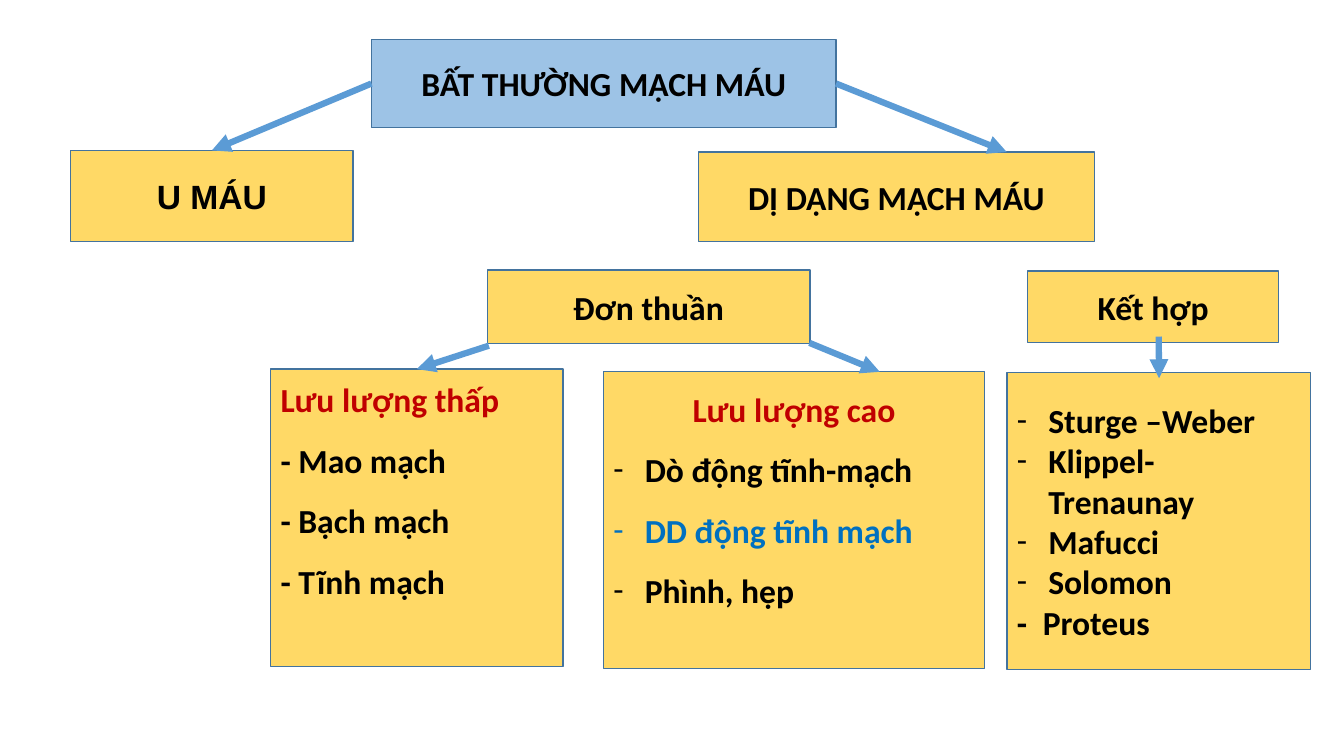
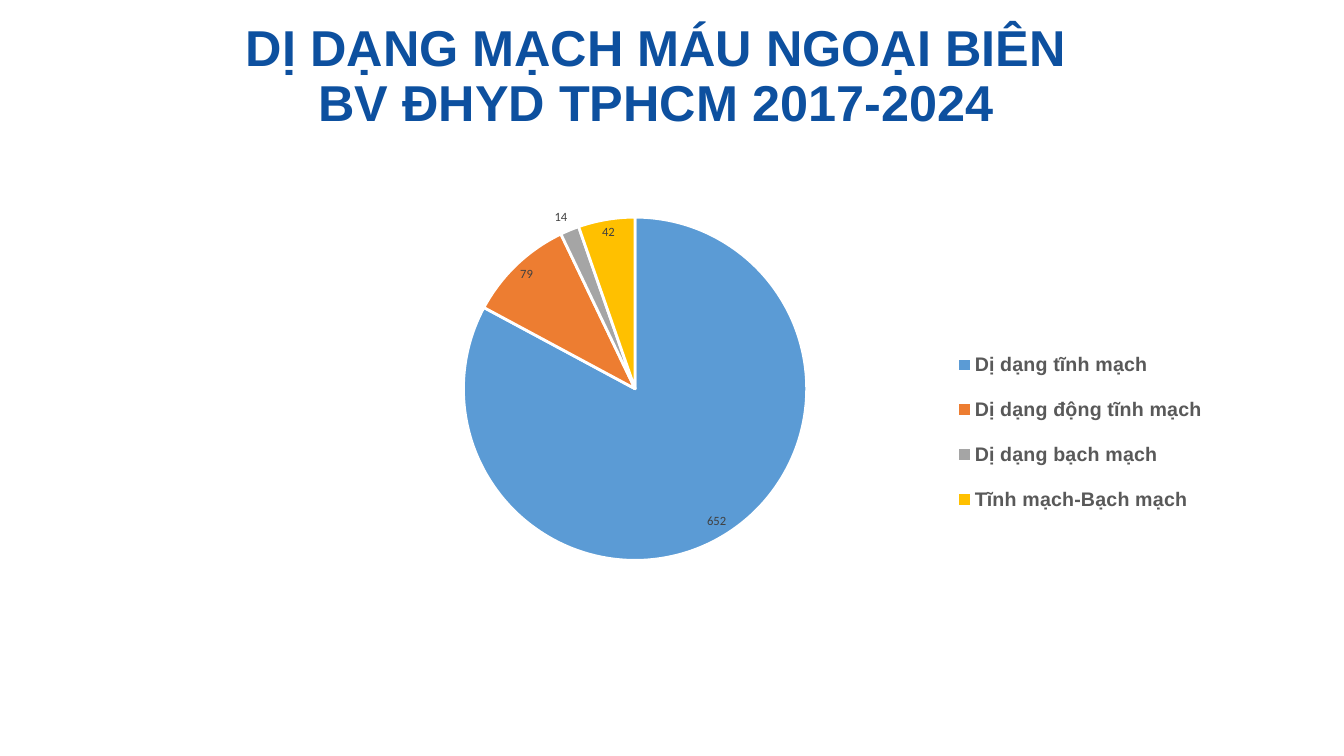
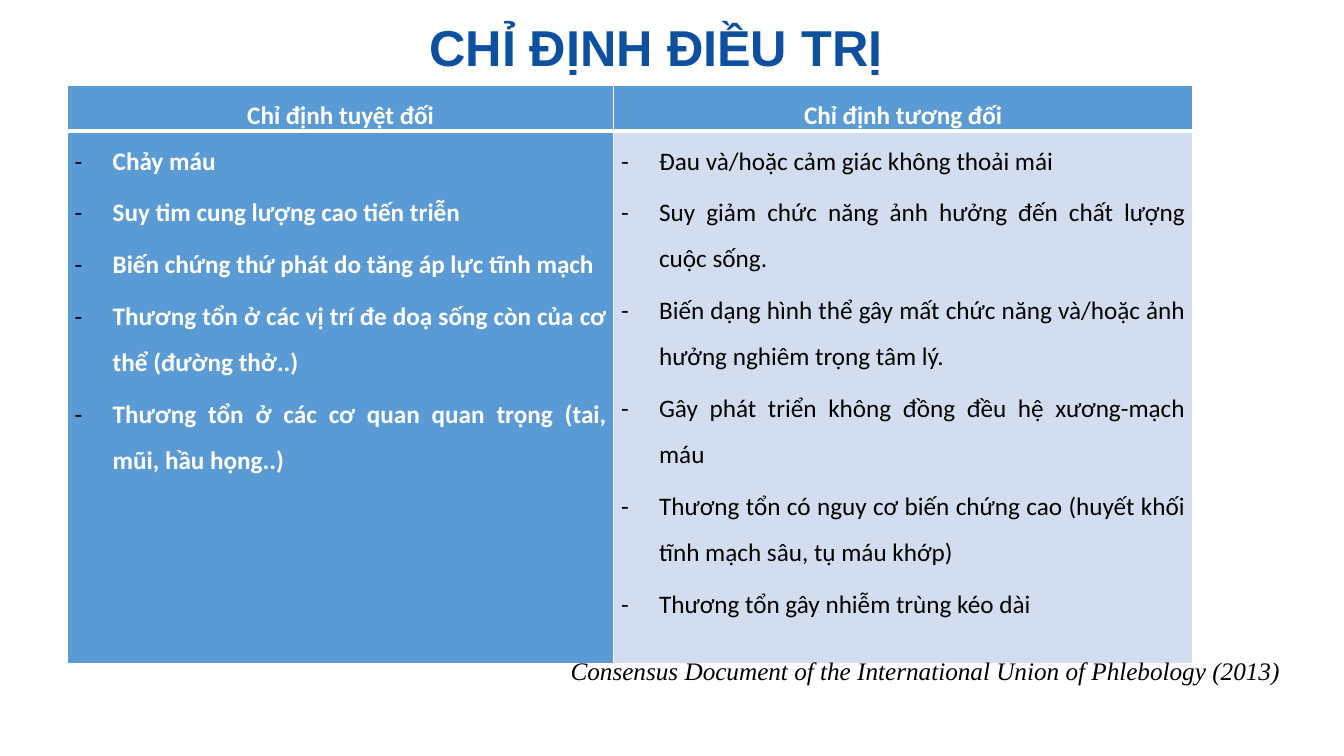
"""Build three slides on vascular anomalies: classification, case chart, treatment indications."""
import lxml.etree
import pptx
import pptx.chart.data
import pptx.dml.color
import pptx.enum.chart
import pptx.enum.shapes
import pptx.enum.text
import pptx.oxml
import pptx.oxml.ns
import pptx.util

Cm = pptx.util.Cm
Pt = pptx.util.Pt
qn = pptx.oxml.ns.qn
Align = pptx.enum.text.PP_ALIGN
Anchor = pptx.enum.text.MSO_ANCHOR

BLUE, YELLOW, OUTLINE = "5B9BD5", "FFD966", "43739E"
BLACK, WHITE, RED, TITLE_BLUE = "000000", "FFFFFF", "C00000", "0D509F"


def color(hex_string):
    """Turn a hex string into a colour."""
    return pptx.dml.color.RGBColor.from_string(hex_string)


def write(frame, index, text, size, ink, face="Calibri", bold=True, italic=False,
          align=Align.LEFT, spacing=1.0, hanging=0, bullet_ink=None):
    """Write one styled paragraph; a hanging one gets a dash bullet unless its dash is typed."""
    paragraph = frame.add_paragraph() if index else frame.paragraphs[0]
    paragraph.text = text
    properties = paragraph._p.get_or_add_pPr()
    if hanging:
        properties.set("marL", str(Cm(hanging)))
        properties.set("indent", str(-Cm(hanging)))
    if hanging and not text.startswith("-"):
        if bullet_ink:
            bullet_color = lxml.etree.SubElement(properties, qn("a:buClr"))
            lxml.etree.SubElement(bullet_color, qn("a:srgbClr"), val=bullet_ink)
        lxml.etree.SubElement(properties, qn("a:buFont"), typeface=face)
        lxml.etree.SubElement(properties, qn("a:buChar"), char="-")
    paragraph.alignment = align
    paragraph.line_spacing = spacing
    font = paragraph.font
    font.name, font.size, font.bold, font.italic = face, Pt(size), bold, italic
    font.color.rgb = color(ink)
    return paragraph


presentation = pptx.Presentation()
presentation.slide_width, presentation.slide_height = Cm(33.87), Cm(19.05)
blank = presentation.slide_layouts[6]

tree_slide = presentation.slides.add_slide(blank)
headings = [
    ("root", (9.36, 0.99, 11.71, 2.23), "BẤT THƯỜNG MẠCH MÁU", "9DC3E6", "Calibri"),
    ("tumour", (1.78, 3.79, 7.12, 2.29), "U MÁU", YELLOW, "Arial"),
    ("malformation", (17.6, 3.83, 9.98, 2.26), "DỊ DẠNG MẠCH MÁU", YELLOW, "Calibri"),
    ("simple", (12.28, 6.8, 8.13, 1.86), "Đơn thuần", YELLOW, "Calibri"),
    ("combined", (25.9, 6.83, 6.32, 1.8), "Kết hợp", YELLOW, "Calibri"),
]
groups = [
    ("low flow", (6.82, 9.3, 7.37, 7.49), "Lưu lượng thấp", Align.LEFT, 0.25, 1.5,
     [("- Mao mạch", BLACK, 0), ("- Bạch mạch", BLACK, 0), ("- Tĩnh mạch", BLACK, 0)]),
    ("high flow", (15.21, 9.36, 9.6, 7.49), "Lưu lượng cao", Align.CENTER, 0.44, 1.5,
     [("Dò động tĩnh-mạch", BLACK, 0.79), ("DD động tĩnh mạch", "0070C0", 0.79),
      ("Phình, hẹp", BLACK, 0.79)]),
    ("syndromes", (25.38, 9.38, 7.65, 7.49), None, None, None, 1.0,
     [("Sturge –Weber", BLACK, 0.79), ("Klippel- Trenaunay", BLACK, 0.79),
      ("Mafucci", BLACK, 0.79), ("Solomon", BLACK, 0.79), ("-\tProteus", BLACK, 0.65)]),
]
boxes = {}
for name, place, *_ in headings + groups:
    box = tree_slide.shapes.add_shape(pptx.enum.shapes.MSO_SHAPE.RECTANGLE, *map(Cm, place))
    box.shadow.inherit = False
    box.fill.solid()
    box.fill.fore_color.rgb = color(YELLOW)
    box.line.color.rgb = color(OUTLINE)
    box.line.width = Pt(1)
    box.text_frame.word_wrap = True
    box.text_frame.vertical_anchor = Anchor.MIDDLE
    boxes[name] = box
for name, _, text, fill, face in headings:
    boxes[name].fill.fore_color.rgb = color(fill)
    write(boxes[name].text_frame, 0, text, 24, BLACK, face, align=Align.CENTER)
for name, _, heading, align, top_margin, spacing, items in groups:
    frame = boxes[name].text_frame
    if heading:
        frame.vertical_anchor = Anchor.TOP
        frame.margin_top = Cm(top_margin)
        write(frame, 0, heading, 24, RED, align=align)
    for index, (text, ink, hanging) in enumerate(items, 1 if heading else 0):
        write(frame, index, text, 24, ink, spacing=spacing, hanging=hanging)

arrows = [
    ((9.36, 2.11, 5.34, 3.79), ("root", 1), ("tumour", 0)),
    ((21.07, 2.11, 25.37, 3.83), ("root", 3), None),
    ((12.32, 8.71, 10.5, 9.3), None, ("low flow", 0)),
    ((20.4, 8.64, 22.17, 9.37), None, None),
    ((29.2, 8.48, 29.21, 9.53), None, None),
]
for ends, start, finish in arrows:
    arrow = tree_slide.shapes.add_connector(
        pptx.enum.shapes.MSO_CONNECTOR.STRAIGHT, *map(Cm, ends))
    if start:
        arrow.begin_connect(boxes[start[0]], start[1])
    if finish:
        arrow.end_connect(boxes[finish[0]], finish[1])
    arrow.line.color.rgb = color(BLUE)
    arrow.line.width = Pt(4.5)
    lxml.etree.SubElement(arrow.line._get_or_add_ln(), qn("a:tailEnd"), type="triangle")
    lxml.etree.SubElement(arrow._element.spPr, qn("a:effectLst"))

titled_slides = []
for title, height in [("DỊ DẠNG MẠCH MÁU NGOẠI BIÊN\vBV ĐHYD TPHCM 2017-2024", 3.28),
                      ("CHỈ ĐỊNH ĐIỀU TRỊ", 2.13)]:
    slide = presentation.slides.add_slide(blank)
    title_box = slide.shapes.add_textbox(Cm(1.93), Cm(0.46), Cm(29.21), Cm(height))
    title_box.text_frame.word_wrap = True
    write(title_box.text_frame, 0, title, 36, TITLE_BLUE, "Arial",
          align=Align.CENTER, spacing=0.9)
    titled_slides.append(slide)
chart_slide, table_slide = titled_slides

cases = [
    ("Dị dạng tĩnh mạch", 652, BLUE),
    ("Dị dạng động tĩnh mạch", 79, "ED7D31"),
    ("Dị dạng bạch mạch", 14, "A5A5A5"),
    ("Tĩnh mạch-Bạch mạch", 42, "FFC000"),
]
chart_data = pptx.chart.data.CategoryChartData()
chart_data.categories = [label for label, _, _ in cases]
chart_data.add_series("Series 1", [count for _, count, _ in cases])
chart = chart_slide.shapes.add_chart(
    pptx.enum.chart.XL_CHART_TYPE.PIE, Cm(2.81), Cm(3.4), Cm(27.81), Cm(13.03), chart_data).chart
chart.has_title = False
chart.font.name, chart.font.size = "Calibri", Pt(10)
chart.font.color.rgb = color(BLACK)
chart.has_legend = True
legend = chart.legend
legend.position = pptx.enum.chart.XL_LEGEND_POSITION.RIGHT
legend.include_in_layout = False
legend.font.name, legend.font.size, legend.font.bold = "Arial", Pt(14), True
legend.font.color.rgb = color("595959")
pie = chart.plots[0]
pie.vary_by_categories = True
for index, (_, _, fill) in enumerate(cases):
    point_format = pie.series[0].points[index].format
    point_format.fill.solid()
    point_format.fill.fore_color.rgb = color(fill)
    point_format.line.color.rgb = color(WHITE)
    point_format.line.width = Pt(2)
labels = pie.series[0].data_labels
labels.show_value = True
labels.position = pptx.enum.chart.XL_LABEL_POSITION.BEST_FIT
labels.font.name, labels.font.size = "Calibri", Pt(9)
labels.font.color.rgb = color("404040")
plot_area = chart._chartSpace.chart.plotArea
for parent, position, area in [(plot_area, 0, (0.155, 0.159, 0.639, 0.664)),
                               (legend._element, 1, (0.763, 0.38, 0.23, 0.39))]:
    for old_layout in parent.findall(qn("c:layout")):
        parent.remove(old_layout)
    layout = lxml.etree.Element(qn("c:layout"))
    manual = lxml.etree.SubElement(layout, qn("c:manualLayout"))
    if parent is plot_area:
        lxml.etree.SubElement(manual, qn("c:layoutTarget"), val="inner")
    for tag in ("c:xMode", "c:yMode"):
        lxml.etree.SubElement(manual, qn(tag), val="edge")
    for tag, value in zip(("c:x", "c:y", "c:w", "c:h"), area):
        lxml.etree.SubElement(manual, qn(tag), val=str(value))
    parent.insert(position, layout)

columns = [
    ("Chỉ định tuyệt đối", 13.77, BLUE, WHITE, True, [
        "Chảy máu",
        "Suy tim cung lượng cao tiến triễn",
        "Biến chứng thứ phát do tăng áp lực tĩnh mạch",
        "Thương tổn ở các vị trí đe doạ sống còn của cơ thể (đường thở..)",
        "Thương tổn ở các cơ quan quan trọng (tai, mũi, hầu họng..)",
    ]),
    ("Chỉ định tương đối", 14.58, "D2DEEF", BLACK, False, [
        "Đau và/hoặc cảm giác không thoải mái",
        "Suy giảm chức năng ảnh hưởng đến chất lượng cuộc sống.",
        "Biến dạng hình thể gây mất chức năng và/hoặc ảnh hưởng nghiêm trọng tâm lý.",
        "Gây phát triển không đồng đều hệ xương-mạch máu",
        "Thương tổn có nguy cơ biến chứng cao (huyết khối tĩnh mạch sâu, tụ máu khớp)",
        "Thương tổn gây nhiễm trùng kéo dài",
    ]),
]
table = table_slide.shapes.add_table(
    2, len(columns), Cm(1.7), Cm(2.15), Cm(28.35), Cm(14.25)).table
table.horz_banding = False
table.rows[0].height, table.rows[1].height = Cm(0.81), Cm(13.44)
for column, (heading, width, fill, ink, bold, items) in enumerate(columns):
    table.columns[column].width = Cm(width)
    head, body = table.cell(0, column), table.cell(1, column)
    for cell, cell_fill, top, bottom in [(head, BLUE, 1, 3), (body, fill, 3, 1)]:
        cell.margin_left = cell.margin_right = Cm(0.18)
        cell.margin_top = cell.margin_bottom = 0
        properties = cell._tc.get_or_add_tcPr()
        for tag, weight in [("a:lnL", 1), ("a:lnR", 1), ("a:lnT", top), ("a:lnB", bottom)]:
            border = lxml.etree.SubElement(properties, qn(tag), w=str(Pt(weight)))
            border_fill = lxml.etree.SubElement(border, qn("a:solidFill"))
            lxml.etree.SubElement(border_fill, qn("a:srgbClr"), val=WHITE)
        cell.fill.solid()
        cell.fill.fore_color.rgb = color(cell_fill)
    write(head.text_frame, 0, heading, 18, WHITE, align=Align.CENTER, spacing=1.5)
    for index, text in enumerate(items):
        paragraph = write(body.text_frame, index, text, 18, ink, bold=bold,
                          align=Align.JUSTIFY, spacing=1.5, hanging=0.96, bullet_ink=BLACK)
        paragraph.space_before = Pt(2 if index else 0)
        paragraph.space_after = Pt(2)

citation = table_slide.shapes.add_textbox(Cm(14.13), Cm(16.38), Cm(18.69), Cm(1.02))
citation.text_frame.word_wrap = True
write(citation.text_frame, 0,
      "Consensus Document of the International Union of Phlebology (2013)",
      18, BLACK, "Times New Roman", bold=False, italic=True)

presentation.save("out.pptx")
